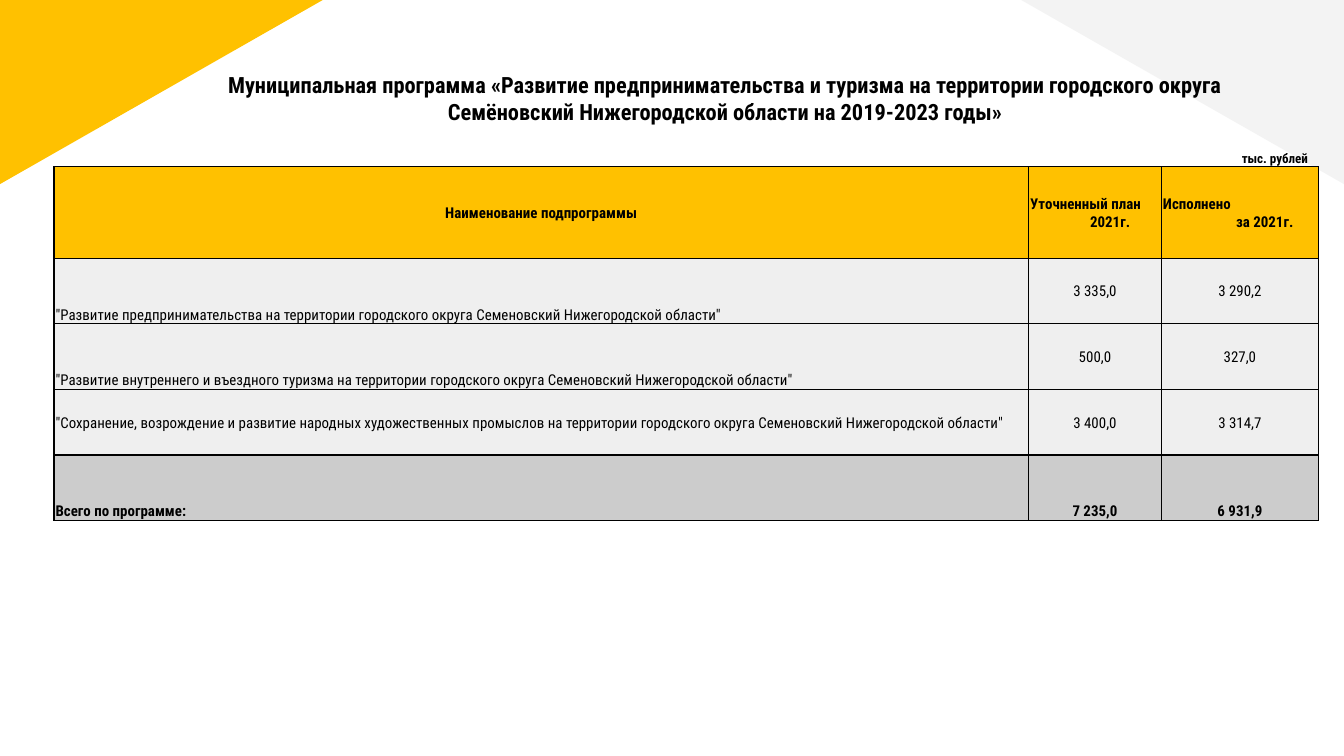
from pptx import Presentation
from pptx.dml.color import RGBColor
from pptx.enum.shapes import MSO_SHAPE
from pptx.enum.text import MSO_ANCHOR, PP_ALIGN
from pptx.oxml import parse_xml
from pptx.oxml.ns import nsdecls
from pptx.util import Cm, Pt

BLACK = RGBColor(0x00, 0x00, 0x00)
YELLOW = RGBColor(0xFF, 0xC1, 0x00)
PALE_GREY = RGBColor(0xF3, 0xF3, 0xF3)
ROW_GREY = RGBColor(0xEF, 0xEF, 0xEF)
TOTAL_GREY = RGBColor(0xCC, 0xCC, 0xCC)
FONT = "Roboto Condensed"
TITLE_ONLY = 5
LEFT, CENTER = PP_ALIGN.LEFT, PP_ALIGN.CENTER
TOP, MIDDLE, BOTTOM = MSO_ANCHOR.TOP, MSO_ANCHOR.MIDDLE, MSO_ANCHOR.BOTTOM
RIGHT_TRIANGLE = MSO_SHAPE.RIGHT_TRIANGLE

SLIDE_WIDTH, SLIDE_HEIGHT = Cm(25.4), Cm(14.29)
COLUMN_WIDTHS = (Cm(18.42), Cm(2.51), Cm(2.97))
HEADER_HEIGHT, ROW_HEIGHT = Cm(1.73), Cm(1.24)

# Two-line headings: first line, second line, indent of the second line
HEADINGS = (
    ("Уточненный план", "2021г.", Cm(1.13)),
    ("Исполнено", "за 2021г.", Cm(1.38)),
)
# Name, plan, actual, anchor of the name
SUBPROGRAMMES = (
    ('"Развитие предпринимательства на территории городского округа '
     'Семеновский Нижегородской области"', "3 335,0", "3 290,2", BOTTOM),
    ('"Развитие внутреннего и въездного туризма на территории городского округа '
     'Семеновский Нижегородской области"', "500,0", "327,0", BOTTOM),
    ('"Сохранение, возрождение и развитие народных художественных промыслов на '
     'территории городского округа Семеновский Нижегородской области"',
     "3 400,0", "3 314,7", MIDDLE),
)
TOTALS = ("Всего по программе:", "7 235,0", "6 931,9")


def format_paragraph(paragraph, size, bold, alignment):
    paragraph.alignment = alignment
    font = paragraph.font
    font.name, font.size, font.bold = FONT, Pt(size), bold
    font.color.rgb = BLACK


def add_corner(slide, left, top, width, height, color, flipped):
    triangle = slide.shapes.add_shape(RIGHT_TRIANGLE, left, top, width, height)
    triangle.shadow.inherit = False
    triangle.rotation = 180
    if flipped:
        triangle.element.spPr.find("{*}xfrm").set("flipH", "1")
    triangle.fill.solid()
    triangle.fill.fore_color.rgb = color
    triangle.line.fill.background()


def place_title(slide, left, top, width, height):
    title = slide.shapes.title
    title.left, title.top, title.width, title.height = left, top, width, height
    # Bring the title in front of the corner triangles
    title.element.getparent().append(title.element)
    frame = title.text_frame
    frame.text = ("Муниципальная программа «Развитие предпринимательства и туризма "
                  "на территории городского округа\v"
                  "Семёновский Нижегородской области на 2019-2023 годы»")
    frame.word_wrap = True
    frame.vertical_anchor = TOP
    frame.margin_left = frame.margin_right = Cm(0.25)
    frame.margin_top = frame.margin_bottom = Cm(0.25)
    format_paragraph(frame.paragraphs[0], 12, True, CENTER)


def add_units(slide, left, top, width, height):
    frame = slide.shapes.add_textbox(left, top, width, height).text_frame
    frame.word_wrap = True
    frame.margin_left = frame.margin_top = Cm(0.03)
    frame.margin_right = frame.margin_bottom = 0
    frame.text = "тыс. рублей"
    format_paragraph(frame.paragraphs[0], 7, True, LEFT)


def add_borders(cell):
    properties = cell._tc.get_or_add_tcPr()
    for position, side in enumerate(("lnL", "lnR", "lnT", "lnB")):
        properties.insert(position, parse_xml(
            f'<a:{side} {nsdecls("a")} w="{Pt(0.75)}"><a:solidFill>'
            f'<a:srgbClr val="{BLACK}"/></a:solidFill></a:{side}>'))


def fill_cell(cell, text, color, bold, alignment=CENTER, anchor=MIDDLE):
    cell.text = text
    cell.vertical_anchor = anchor
    cell.margin_left = cell.margin_right = cell.margin_top = Cm(0.03)
    cell.margin_bottom = 0
    cell.fill.solid()
    cell.fill.fore_color.rgb = color
    add_borders(cell)
    for paragraph in cell.text_frame.paragraphs:
        format_paragraph(paragraph, 8, bold, alignment)


def add_budget_table(slide, left, top):
    row_count = len(SUBPROGRAMMES) + 2
    width = sum(COLUMN_WIDTHS)
    height = HEADER_HEIGHT + ROW_HEIGHT * (row_count - 1)
    table = slide.shapes.add_table(
        row_count, len(COLUMN_WIDTHS), left, top, width, height).table
    for column, column_width in zip(table.columns, COLUMN_WIDTHS):
        column.width = column_width
    for row in table.rows:
        row.height = ROW_HEIGHT
    table.rows[0].height = HEADER_HEIGHT

    fill_cell(table.cell(0, 0), "Наименование подпрограммы", YELLOW, True)
    for column, (first, second, indent) in enumerate(HEADINGS, start=1):
        cell = table.cell(0, column)
        fill_cell(cell, f"{first}\n{second}", YELLOW, True, LEFT)
        second_line = cell.text_frame.paragraphs[1]
        second_line._p.get_or_add_pPr().set("marL", str(indent))

    for row, (name, plan, actual, anchor) in enumerate(SUBPROGRAMMES, start=1):
        fill_cell(table.cell(row, 0), name, ROW_GREY, False, LEFT, anchor)
        for column, value in enumerate((plan, actual), start=1):
            fill_cell(table.cell(row, column), value, ROW_GREY, False)

    for column, text in enumerate(TOTALS):
        alignment = CENTER if column else LEFT
        fill_cell(table.cell(row_count - 1, column), text, TOTAL_GREY, True,
                  alignment, BOTTOM)


def main():
    presentation = Presentation()
    presentation.slide_width = SLIDE_WIDTH
    presentation.slide_height = SLIDE_HEIGHT
    slide = presentation.slides.add_slide(presentation.slide_layouts[TITLE_ONLY])
    corner_width, corner_height = Cm(6.1), Cm(3.48)
    add_corner(slide, 0, 0, corner_width, corner_height, YELLOW, True)
    add_corner(slide, SLIDE_WIDTH - corner_width, 0, corner_width, corner_height,
               PALE_GREY, False)
    add_budget_table(slide, Cm(1.02), Cm(3.15))
    place_title(slide, Cm(2.46), Cm(1.09), Cm(22.5), Cm(2.01))
    add_units(slide, Cm(23.44), Cm(2.82), Cm(2.69), Cm(0.33))
    presentation.save("out.pptx")


if __name__ == "__main__":
    main()
